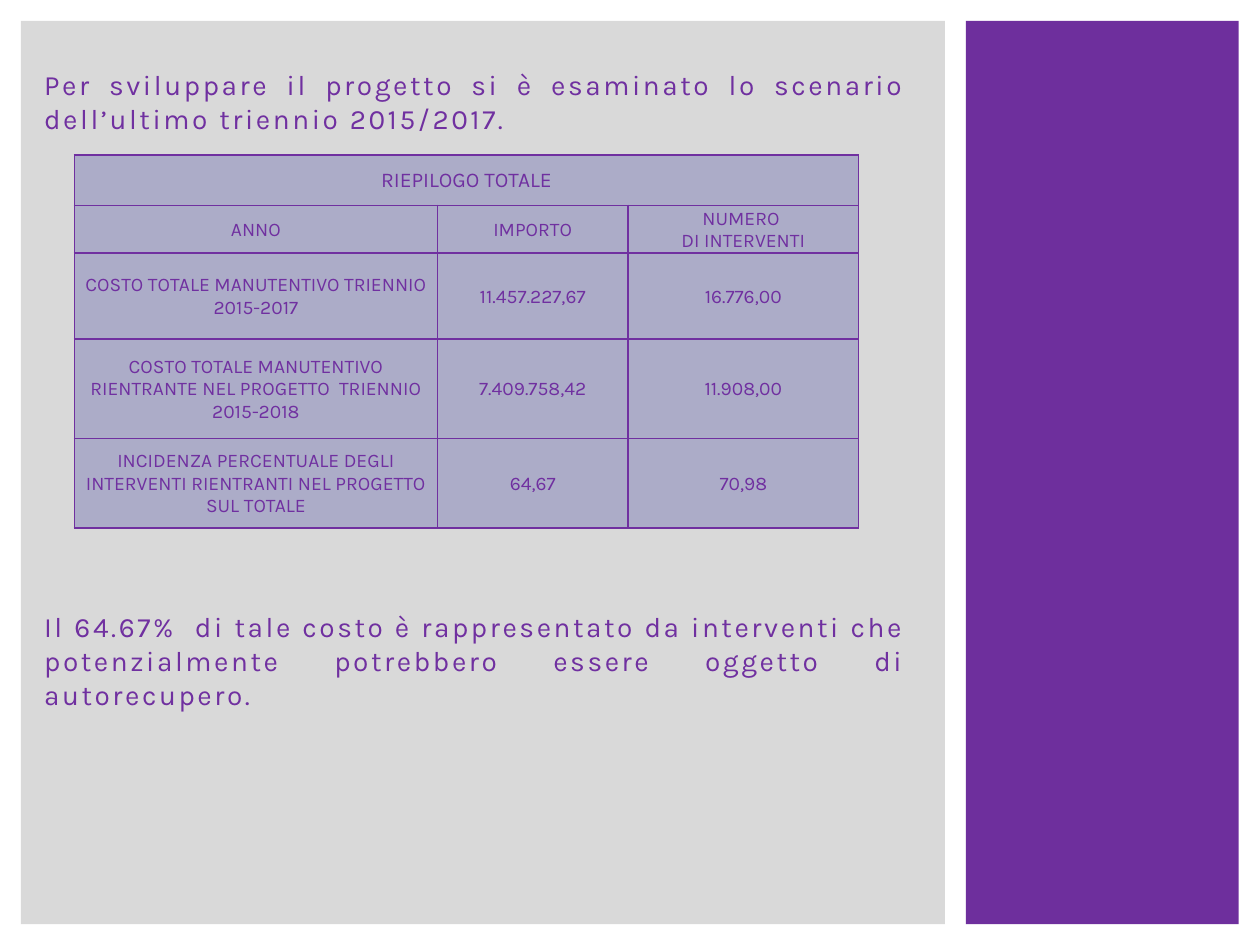
from lxml import etree
from pptx import Presentation
from pptx.dml.color import RGBColor
from pptx.enum.shapes import MSO_SHAPE
from pptx.enum.text import MSO_ANCHOR, PP_ALIGN
from pptx.oxml.ns import qn
from pptx.util import Cm, Pt

RECTANGLE = MSO_SHAPE.RECTANGLE
MIDDLE = MSO_ANCHOR.MIDDLE
CENTER, JUSTIFY = PP_ALIGN.CENTER, PP_ALIGN.JUSTIFY
PURPLE = RGBColor(0x70, 0x30, 0xA0)
PANEL_PURPLE = RGBColor(0x6E, 0x2F, 0x9D)
PANEL_GREY = RGBColor(0xD9, 0xD9, 0xD9)
CELL_LILAC = RGBColor(0xAC, 0xAC, 0xC8)
FONT = "Karla"

MARGIN = Cm(0.42)
PANEL_HEIGHT = Cm(18.21)
COLUMN_WIDTHS = [7.32, 3.84, 4.65]
ROW_HEIGHTS = [1.02, 0.86, 1.73, 2.01, 1.8]
SUMMARY = [
    ["RIEPILOGO TOTALE"],
    ["ANNO", "IMPORTO", "NUMERO \nDI INTERVENTI"],
    ["COSTO TOTALE MANUTENTIVO TRIENNIO 2015-2017", "11.457.227,67", "16.776,00"],
    ["COSTO TOTALE MANUTENTIVO RIENTRANTE NEL PROGETTO  TRIENNIO 2015-2018",
     "7.409.758,42", "11.908,00"],
    ["INCIDENZA PERCENTUALE DEGLI INTERVENTI RIENTRANTI NEL PROGETTO SUL TOTALE",
     "64,67", "70,98"],
]
SCENARIO = ("Per sviluppare il progetto si è esaminato lo scenario "
            "dell’ultimo triennio 2015/2017.")
CONCLUSION = ("Il 64.67%  di tale costo è rappresentato da interventi che "
              "potenzialmente potrebbero essere oggetto di autorecupero.")


def add_panel(slide, left, width, color):
    panel = slide.shapes.add_shape(RECTANGLE, left, MARGIN, width, PANEL_HEIGHT)
    panel.shadow.inherit = False
    panel.fill.solid()
    panel.fill.fore_color.rgb = color
    panel.line.fill.background()


def format_text(text_frame, size, alignment):
    for paragraph in text_frame.paragraphs:
        paragraph.alignment = alignment
        for run in paragraph.runs:
            run.font.name = FONT
            run.font.size = Pt(size)
            run.font.color.rgb = PURPLE


def add_statement(slide, top, height, statement):
    box = slide.shapes.add_textbox(Cm(0.64), top, Cm(17.88), height)
    frame = box.text_frame
    frame.word_wrap = True
    frame.text = statement
    format_text(frame, 16, JUSTIFY)
    paragraph = frame.paragraphs[0]
    paragraph.line_spacing = 1.02
    paragraph.runs[0].font._element.set("spc", "150")


def add_borders(cell):
    properties = cell._tc.get_or_add_tcPr()
    for side in ("lnL", "lnR", "lnT", "lnB"):
        border = etree.SubElement(properties, qn(f"a:{side}"), w=str(Pt(1)))
        fill = etree.SubElement(border, qn("a:solidFill"))
        etree.SubElement(fill, qn("a:srgbClr"), val=str(PURPLE))


def format_cell(cell, size):
    add_borders(cell)
    cell.fill.solid()
    cell.fill.fore_color.rgb = CELL_LILAC
    cell.vertical_anchor = MIDDLE
    cell.margin_left = cell.margin_right = cell.margin_top = Cm(0.03)
    cell.margin_bottom = 0
    format_text(cell.text_frame, size, CENTER)


def add_summary_table(slide):
    table = slide.shapes.add_table(
        len(ROW_HEIGHTS), len(COLUMN_WIDTHS), Cm(1.5), Cm(3.12),
        Cm(sum(COLUMN_WIDTHS)), Cm(sum(ROW_HEIGHTS))).table
    table.first_row = False
    table.horz_banding = False
    for column, width in zip(table.columns, COLUMN_WIDTHS):
        column.width = Cm(width)
    for row, height, values in zip(table.rows, ROW_HEIGHTS, SUMMARY):
        row.height = Cm(height)
        for cell, value in zip(row.cells, values):
            cell.text_frame.text = value
        for cell in row.cells:
            format_cell(cell, 12 if values is SUMMARY[0] else 11)
    table.cell(0, 0).merge(table.cell(0, len(COLUMN_WIDTHS) - 1))


def main():
    presentation = Presentation()
    presentation.slide_width = Cm(25.4)
    presentation.slide_height = Cm(19.05)
    slide = presentation.slides.add_slide(presentation.slide_layouts[6])
    add_panel(slide, Cm(19.47), Cm(5.5), PANEL_PURPLE)
    add_panel(slide, MARGIN, Cm(18.63), PANEL_GREY)
    add_statement(slide, Cm(1.22), Cm(1.6), SCENARIO)
    add_summary_table(slide)
    add_statement(slide, Cm(12.15), Cm(2.3), CONCLUSION)
    presentation.save("out.pptx")


if __name__ == "__main__":
    main()
